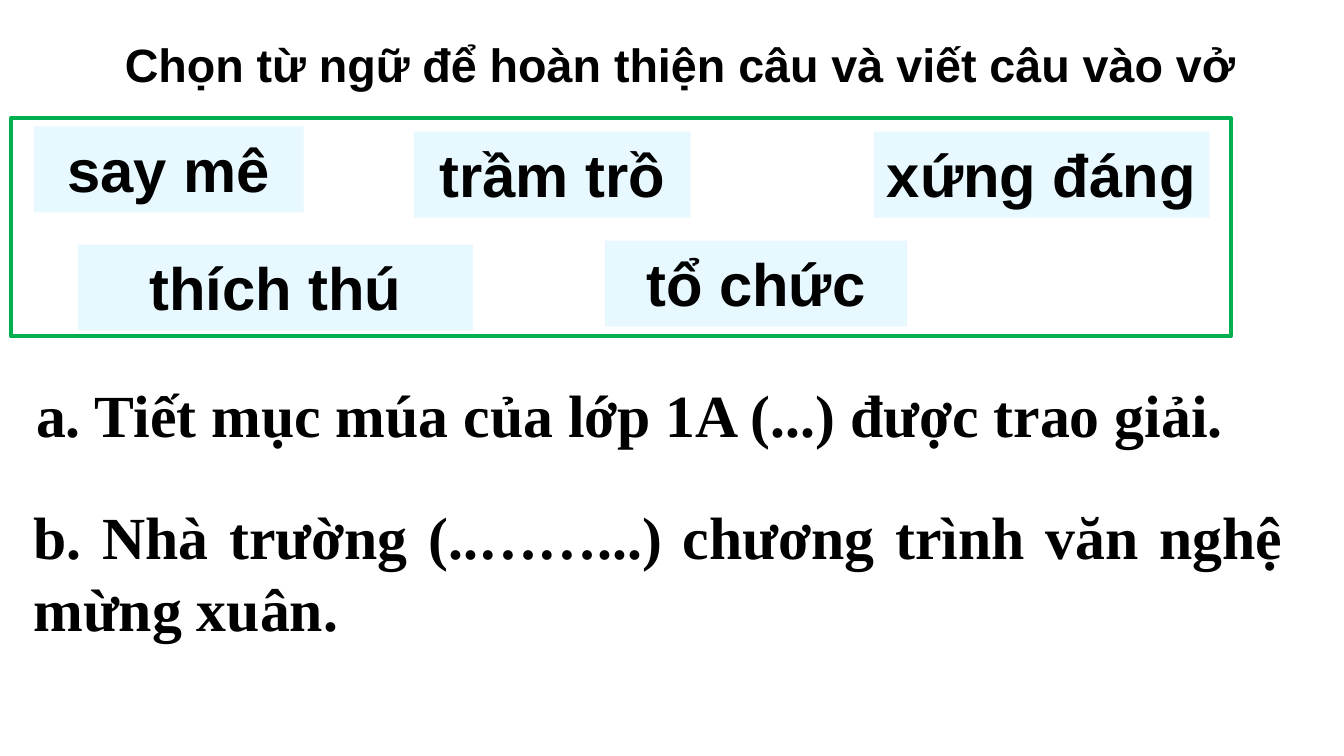
from dataclasses import dataclass
from typing import NamedTuple

from pptx import Presentation
from pptx.dml.color import RGBColor as Rgb
from pptx.enum.shapes import MSO_SHAPE as Kind
from pptx.enum.text import MSO_ANCHOR as Anchor, PP_ALIGN as Align
from pptx.util import Inches, Pt


@dataclass(frozen=True)
class Theme:
    ink: Rgb = Rgb(0, 0, 0)
    chip: Rgb = Rgb(0xE7, 0xF9, 0xFF)
    frame: Rgb = Rgb(0x00, 0xB0, 0x50)
    sans: str = "Arial"
    serif: str = "Times New Roman"
    title: int = 25
    body: int = 32
    edge: int = 2


class Box(NamedTuple):
    """Place and size in grid columns and rows."""
    col: float
    row: float
    wide: float
    high: float


class Line(NamedTuple):
    text: str
    box: Box
    font: str
    size: int


class Word(NamedTuple):
    text: str
    col: float
    row: float
    wide: float


THEME = Theme()
WIDE = Inches(10)
HIGH = WIDE * 9 // 16
CELL = WIDE // 100  # square grid, 100 columns across the slide
CHIP_HIGH = 6.4

FRAME = Box(0.8, 8.8, 90.8, 16.2)
LINES = [
    Line("Chọn từ ngữ để hoàn thiện câu và viết câu vào vở",
         Box(8.3, 2.2, 87.1, 5.2), THEME.sans, THEME.title),
    Line("a. Tiết mục múa của lớp 1A (...) được trao giải.",
         Box(1.7, 27.6, 95, 6.4), THEME.serif, THEME.body),
    Line("b. Nhà trường (..……...) chương trình văn nghệ mừng xuân.",
         Box(1.5, 36.7, 95, 11.8), THEME.serif, THEME.body),
]
WORDS = [
    Word("say mê", 2.5, 9.4, 20.1),
    Word("thích thú", 5.8, 18.2, 29.4),
    Word("tổ chức", 45, 17.9, 22.5),
    Word("trầm trồ", 30.8, 9.8, 20.6),
    Word("xứng đáng", 65, 9.8, 25),
]


def place(box: Box) -> list[int]:
    return [round(side * CELL) for side in box]


def write(shape, text: str, font: str, size: int, align: Align) -> None:
    shape.text_frame.text = text
    para = shape.text_frame.paragraphs[0]
    para.alignment = align
    face = para.runs[0].font
    face.name, face.size, face.bold = font, Pt(size), True
    face.color.rgb = THEME.ink


def add_rect(slide, box: Box):
    rect = slide.shapes.add_shape(Kind.RECTANGLE, *place(box))
    rect.shadow.inherit = False
    return rect


def add_frame(slide, box: Box) -> None:
    rect = add_rect(slide, box)
    rect.fill.background()
    rect.line.color.rgb = THEME.frame
    rect.line.width = Pt(THEME.edge)


def add_line(slide, line: Line) -> None:
    shape = slide.shapes.add_textbox(*place(line.box))
    shape.text_frame.word_wrap = True
    write(shape, line.text, line.font, line.size, Align.JUSTIFY)


def add_word(slide, word: Word) -> None:
    rect = add_rect(slide, Box(word.col, word.row, word.wide, CHIP_HIGH))
    rect.fill.solid()
    rect.fill.fore_color.rgb = THEME.chip
    rect.line.fill.background()
    rect.text_frame.word_wrap = False
    rect.text_frame.vertical_anchor = Anchor.TOP
    write(rect, word.text, THEME.sans, THEME.body, Align.CENTER)


def main() -> None:
    deck = Presentation()
    deck.slide_width, deck.slide_height = WIDE, HIGH
    slide = deck.slides.add_slide(deck.slide_layouts[6])
    add_frame(slide, FRAME)
    for line in LINES:
        add_line(slide, line)
    for word in WORDS:
        add_word(slide, word)
    deck.save("out.pptx")


if __name__ == "__main__":
    main()
